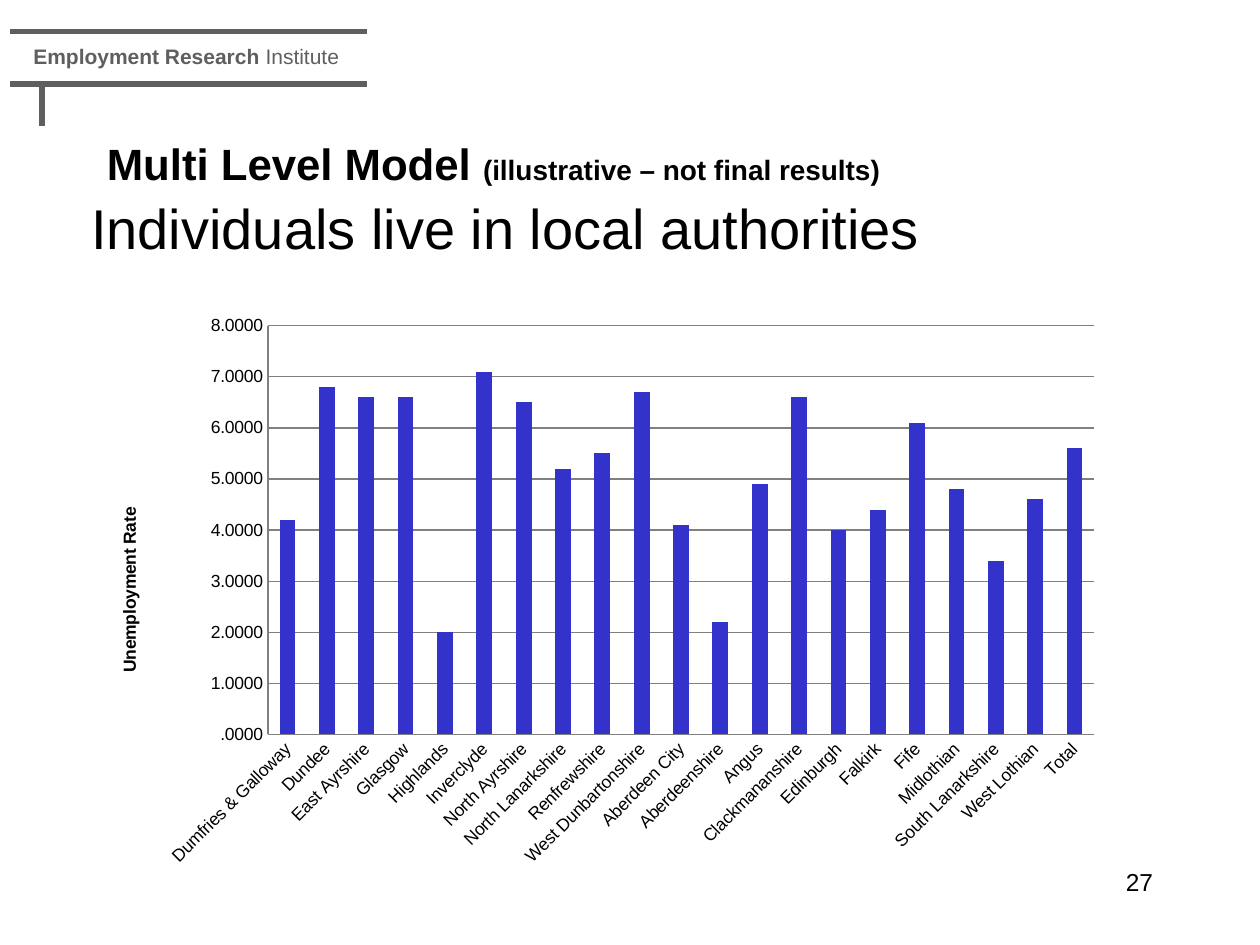
from lxml import etree
from pptx import Presentation
from pptx.chart.data import CategoryChartData
from pptx.dml.color import RGBColor
from pptx.enum.chart import XL_CHART_TYPE, XL_TICK_MARK
from pptx.enum.shapes import MSO_CONNECTOR
from pptx.enum.text import MSO_ANCHOR, PP_ALIGN
from pptx.oxml import parse_xml
from pptx.oxml.ns import nsdecls, qn
from pptx.util import Pt

GREY, BLACK, BLUE, AXIS_GREY = "5F5F5F", "000000", "3333CC", "808080"
rgb = RGBColor.from_string


def add_text(box, runs, color, align=PP_ALIGN.LEFT, anchor=MSO_ANCHOR.TOP):
    """Add a text box; box is left, top, width, height, runs are (text, size, bold)."""
    frame = slide.shapes.add_textbox(*map(Pt, box)).text_frame
    frame.word_wrap = True
    frame.vertical_anchor = anchor
    paragraph = frame.paragraphs[0]
    paragraph.alignment = align
    for text, size, bold in runs:
        run = paragraph.add_run()
        run.text = text
        run.font.name = "Arial"
        run.font.size = Pt(size)
        run.font.bold = bold
        run.font.color.rgb = rgb(color)
    return frame


def manual_layout(target, **fractions):
    """Layout XML that places a chart part by fractions of the chart area."""
    values = "".join(f'<c:{key} val="{value}"/>' for key, value in fractions.items())
    return parse_xml(
        f'<c:layout {nsdecls("c")}><c:manualLayout>{target}'
        f'<c:xMode val="edge"/><c:yMode val="edge"/>{values}'
        "</c:manualLayout></c:layout>"
    )


presentation = Presentation()
presentation.slide_width, presentation.slide_height = Pt(720), Pt(540)
slide = presentation.slides.add_slide(presentation.slide_layouts[6])

# Institute header
header = add_text(
    (12, 24, 258, 16),
    [("Employment Research ", 12, True), ("Institute", 12, False)],
    GREY,
)
header.margin_top = header.margin_bottom = Pt(1)
for ends in [(6, 18, 210, 18), (6, 48, 210, 48), (24, 48, 24, 72)]:
    rule = slide.shapes.add_connector(MSO_CONNECTOR.STRAIGHT, *map(Pt, ends))
    rule.line.color.rgb = rgb(GREY)
    rule.line.width = Pt(3)
    etree.SubElement(rule._element.spPr, qn("a:effectLst"))

# Page number, title and subtitle
add_text((516, 492, 150, 36), [("27", 14, False)], BLACK, align=PP_ALIGN.RIGHT)
add_text(
    (54, 48, 612, 90),
    [("Multi Level Model ", 25, True), ("(illustrative – not final results)", 16, True)],
    BLACK,
    anchor=MSO_ANCHOR.MIDDLE,
)
add_text((45, 107, 518, 46), [("Individuals live in local authorities", 32, False)], BLACK)

# Unemployment chart
unemployment = {
    "Dumfries & Galloway": 4.2, "Dundee": 6.8, "East Ayrshire": 6.6,
    "Glasgow": 6.6, "Highlands": 2, "Inverclyde": 7.1, "North Ayrshire": 6.5,
    "North Lanarkshire": 5.2, "Renfrewshire": 5.5, "West Dunbartonshire": 6.7,
    "Aberdeen City": 4.1, "Aberdeenshire": 2.2, "Angus": 4.9,
    "Clackmananshire": 6.6, "Edinburgh": 4, "Falkirk": 4.4, "Fife": 6.1,
    "Midlothian": 4.8, "South Lanarkshire": 3.4, "West Lothian": 4.6,
    "Total": 5.6,
}
chart_data = CategoryChartData()
chart_data.categories = list(unemployment)
chart_data.add_series("Series 1", list(unemployment.values()))
chart = slide.shapes.add_chart(
    XL_CHART_TYPE.COLUMN_CLUSTERED, Pt(54), Pt(173), Pt(583), Pt(329), chart_data
).chart
chart.has_legend = False
chart.has_title = False
chart.font.name = "Arial"
chart.font.size = Pt(10)
chart.font.color.rgb = rgb(BLACK)

plot = chart.plots[0]
plot.gap_width = 150
plot.vary_by_categories = False
columns = plot.series[0].format.fill
columns.solid()
columns.fore_color.rgb = rgb(BLUE)

category_axis, value_axis = chart.category_axis, chart.value_axis
for axis in (category_axis, value_axis):
    axis.major_tick_mark = axis.minor_tick_mark = XL_TICK_MARK.NONE
    axis.format.line.color.rgb = rgb(AXIS_GREY)
    axis.format.line.width = Pt(0.75)
    axis.tick_labels.font.size = Pt(10)
category_axis.tick_labels.font._element.getparent().getparent().getparent().find(
    qn("a:bodyPr")
).set("rot", "-2700000")

value_axis.minimum_scale, value_axis.maximum_scale, value_axis.major_unit = 0, 8, 1
value_axis.tick_labels.number_format = "####.0000"
value_axis.tick_labels.number_format_is_linked = False
value_axis.has_major_gridlines = True
value_axis.major_gridlines.format.line.color.rgb = rgb(AXIS_GREY)
value_axis.major_gridlines.format.line.width = Pt(0.75)

title_frame = value_axis.axis_title.text_frame
title_frame._txBody.find(qn("a:bodyPr")).set("rot", "-5400000")
title_run = title_frame.paragraphs[0].add_run()
title_run.text = "Unemployment Rate"
title_run.font.name = "Arial"
title_run.font.size = Pt(10)
title_run.font.bold = True
title_run.font.color.rgb = rgb(BLACK)

title_element = value_axis.axis_title._element
plot_area = chart._chartSpace.chart.plotArea
for element in (title_element, plot_area):
    for layout in element.findall(qn("c:layout")):
        element.remove(layout)
title_element.find(qn("c:tx")).addnext(manual_layout("", x=0.02, y=0.35))
plot_area.insert(
    0, manual_layout('<c:layoutTarget val="inner"/>', x=0.17, y=0.04, w=0.81, h=0.71)
)

presentation.save("out.pptx")
